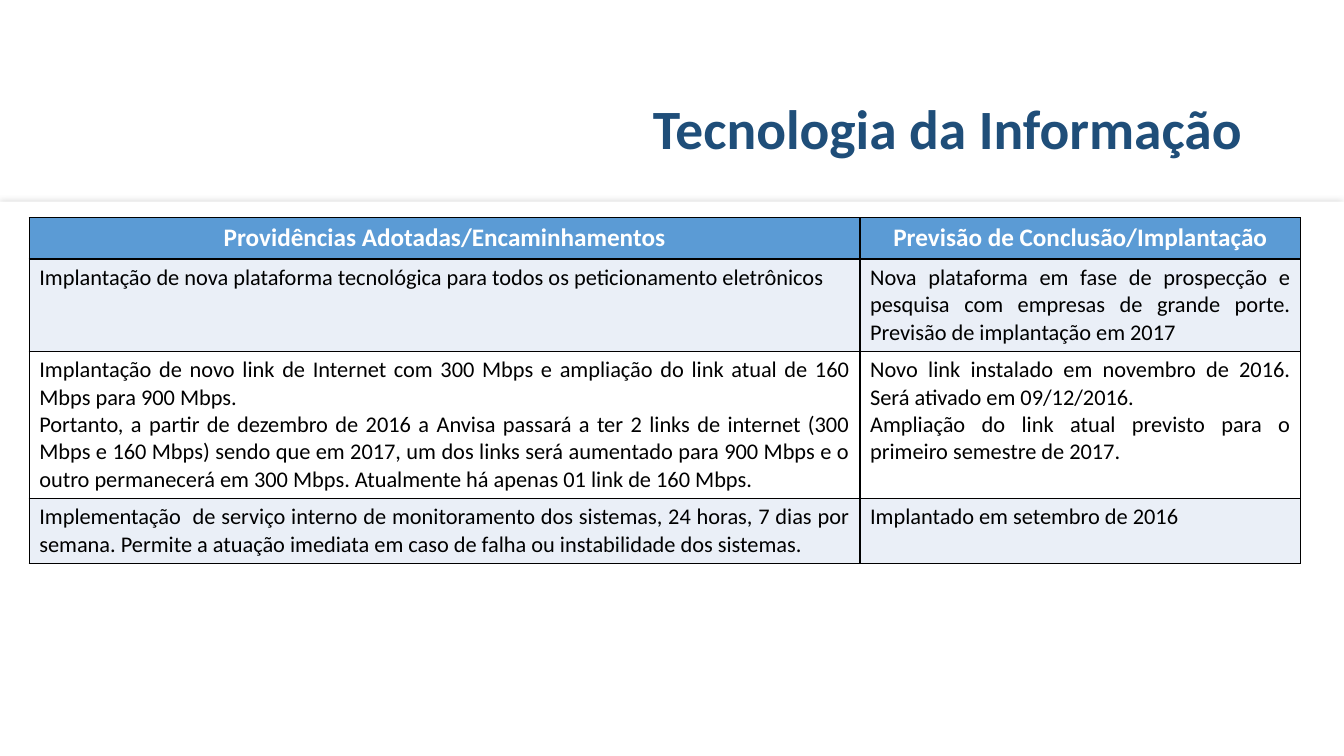
from lxml.etree import SubElement
from pptx import Presentation
from pptx.dml.color import RGBColor
from pptx.enum.shapes import MSO_SHAPE
from pptx.enum.text import MSO_ANCHOR, PP_ALIGN
from pptx.oxml.ns import qn
from pptx.util import Inches, Pt

WIDE, HIGH = 13.33, 7.5
FONT = "Calibri"
COLORS = {"title": "1F4E79", "head": "5B9BD5", "band": "EAEFF7",
          "white": "FFFFFF", "black": "000000", "shade": "A6A6A6"}
COLS = (8.24, 4.37)
ROWS = (0.41, 0.63, 0.63, 0.63)
HEAD = ("Providências Adotadas/Encaminhamentos",
        "Previsão de Conclusão/Implantação")
BODY = (
    ("Implantação de nova plataforma tecnológica para todos os "
     "peticionamento eletrônicos",
     "Nova plataforma em fase de prospecção e pesquisa com empresas de "
     "grande porte. Previsão de implantação em 2017"),
    ("Implantação de novo link de Internet com 300 Mbps e ampliação do link "
     "atual de 160 Mbps para 900 Mbps.\n"
     "Portanto, a partir de dezembro de 2016 a Anvisa passará a ter 2 links "
     "de internet (300 Mbps e 160 Mbps) sendo que em 2017, um dos links será "
     "aumentado para 900 Mbps e o outro permanecerá em 300 Mbps. Atualmente "
     "há apenas 01 link de 160 Mbps.",
     "Novo link instalado em novembro de 2016. Será ativado em 09/12/2016.\n"
     "Ampliação do link atual previsto para o primeiro semestre de 2017."),
    ("Implementação  de serviço interno de monitoramento dos sistemas, "
     "24 horas, 7 dias por semana. Permite a atuação imediata em caso de "
     "falha ou instabilidade dos sistemas.",
     "Implantado em setembro de 2016"),
)


def paint(fill, name):
    fill.solid()
    fill.fore_color.rgb = RGBColor.from_string(COLORS[name])


def write(frame, text, size=16, color="black", bold=False,
          align=PP_ALIGN.JUSTIFY, space=None):
    frame.text = text
    for para in frame.paragraphs:
        para.alignment = align
        para.line_spacing = space
        font = para.font
        font.name, font.size, font.bold = FONT, Pt(size), bold
        font.color.rgb = RGBColor.from_string(COLORS[color])


def add_panel(slide, box):
    """White lower area with a soft shadow along its edge."""
    panel = slide.shapes.add_shape(MSO_SHAPE.RECTANGLE, *map(Inches, box))
    paint(panel.fill, "white")
    panel.line.fill.background()
    panel.shadow.inherit = False
    effects = panel.element.spPr.find(qn("a:effectLst"))
    shadow = SubElement(effects, qn("a:outerShdw"), blurRad=str(Pt(5)),
                        dist="0", dir="0", algn="ctr", rotWithShape="0")
    shade = SubElement(shadow, qn("a:srgbClr"), val=COLORS["shade"])
    SubElement(shade, qn("a:alpha"), val="42000")


def add_title(slide, box):
    title = slide.shapes.title
    title.left, title.top, title.width, title.height = map(Inches, box)
    frame = title.text_frame
    frame.vertical_anchor = MSO_ANCHOR.MIDDLE
    write(frame, "Tecnologia da Informação", size=39.6, color="title",
          bold=True, align=PP_ALIGN.RIGHT, space=0.9)


def add_edges(cell):
    props = cell._tc.get_or_add_tcPr()
    for place, side in enumerate(("lnL", "lnR", "lnT", "lnB")):
        line = props.makeelement(qn("a:" + side), {"w": str(Pt(1))})
        props.insert(place, line)
        fill = SubElement(line, qn("a:solidFill"))
        SubElement(fill, qn("a:srgbClr"), val=COLORS["black"])


def add_grid(slide, box):
    lines = (HEAD, *BODY)
    table = slide.shapes.add_table(len(lines), len(COLS),
                                   *map(Inches, box)).table
    for col, width in zip(table.columns, COLS):
        col.width = Inches(width)
    for index, (row, height, texts) in enumerate(zip(table.rows, ROWS, lines)):
        row.height = Inches(height)
        for cell, text in zip(row.cells, texts):
            if index == 0:
                paint(cell.fill, "head")
                write(cell.text_frame, text, size=18, color="white",
                      bold=True, align=PP_ALIGN.CENTER)
            else:
                paint(cell.fill, "band" if index % 2 else "white")
                write(cell.text_frame, text)
            add_edges(cell)


def main():
    deck = Presentation()
    deck.slide_width, deck.slide_height = Inches(WIDE), Inches(HIGH)
    slide = deck.slides.add_slide(deck.slide_layouts[5])
    paint(slide.background.fill, "white")
    add_panel(slide, (0, 2, WIDE, HIGH - 2))
    add_title(slide, (0.92, 0.64, 11.5, 1.32))
    add_grid(slide, (0.29, 2.16, sum(COLS), sum(ROWS)))
    deck.save("out.pptx")


if __name__ == "__main__":
    main()
